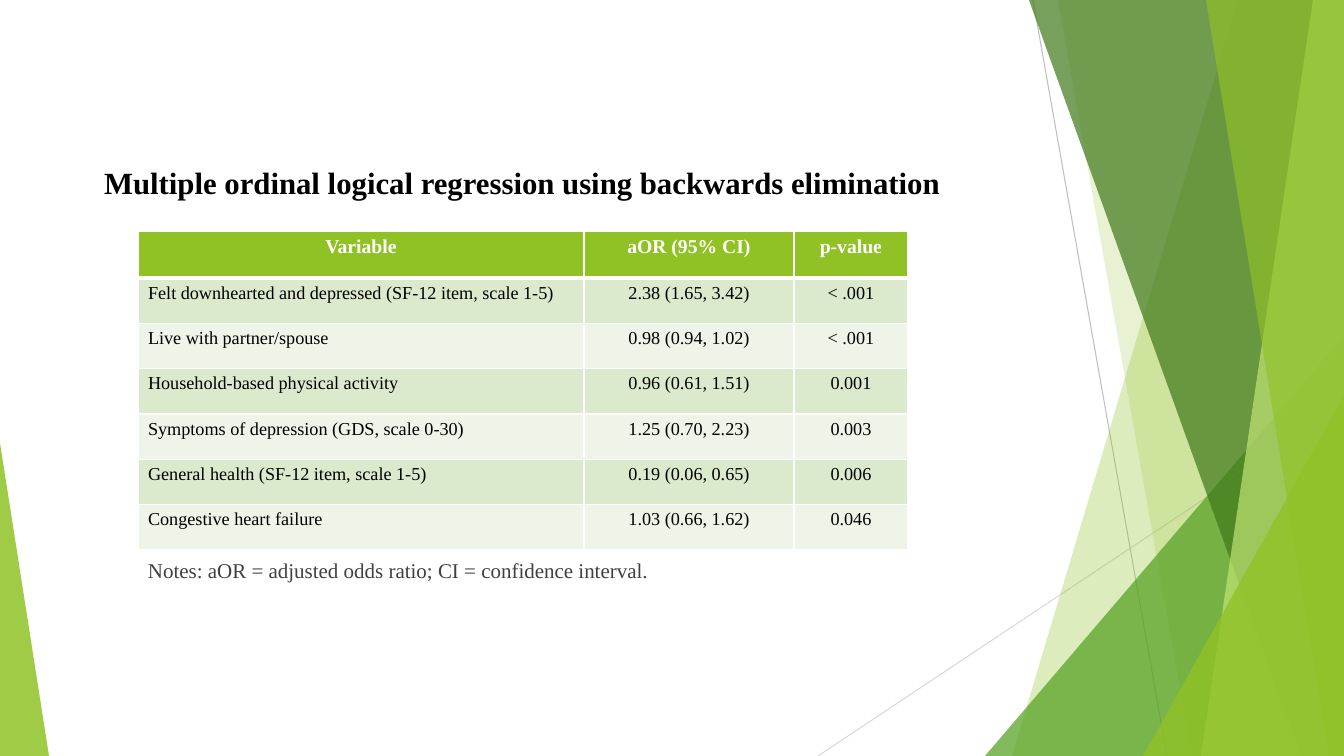
from lxml.etree import SubElement
from pptx import Presentation
from pptx.dml.color import RGBColor
from pptx.enum.shapes import MSO_CONNECTOR, MSO_SHAPE
from pptx.enum.text import MSO_ANCHOR, PP_ALIGN
from pptx.oxml.ns import qn
from pptx.util import Pt

TITLE = "Multiple ordinal logical regression using backwards elimination"
NOTES = "Notes: aOR = adjusted odds ratio; CI = confidence interval."
ROWS = [
    ("Variable", "aOR (95% CI)", "p-value"),
    ("Felt downhearted and depressed (SF-12 item, scale 1-5)", "2.38 (1.65, 3.42)", "< .001"),
    ("Live with partner/spouse", "0.98 (0.94, 1.02)", "< .001"),
    ("Household-based physical activity", "0.96 (0.61, 1.51)", "0.001"),
    ("Symptoms of depression (GDS, scale 0-30)", "1.25 (0.70, 2.23)", "0.003"),
    ("General health (SF-12 item, scale 1-5)", "0.19 (0.06, 0.65)", "0.006"),
    ("Congestive heart failure", "1.03 (0.66, 1.62)", "0.046"),
]

THEME = {
    "font": "Times New Roman",
    "lime": "90C226", "green": "54A021", "forest": "3F7819", "pale": "C0E474",
    "white": "FFFFFF", "black": "000000", "note": "404040",
    "bands": ("DBE9CD", "EEF4E8"),
    "title_size": 22, "header_size": 14, "cell_size": 13, "note_size": 15,
}

PX = 914400 / 100.8
WIDTH, HEIGHT = 1344, 756
RAYS = [((1033, 0), (1167, HEIGHT), "BFBFBF"), ((WIDTH, 406), (818, HEIGHT), "D9D9D9")]
FACETS = [
    ("band", (1238, 1012), "lime", 30),
    ("band", (1058, 1192), "lime", 20),
    ("triangle", (985, 336, 359, 420, 1), "green", 72),
    ("band", (1029, 1301), "forest", 70),
    ("band", (1313, 1201), "pale", 70),
    ("band", (1206, 1329), "lime", 65),
    ("triangle", (1143, 396, 201, 360, 1), "lime", 80),
    ("triangle", (0, 443, 49, 313, 0), "lime", 85),
]
TITLE_BOX = (48, 157, 948, 50)
NOTES_BOX = (138, 553, 840, 34)
TABLE_LEFT, TABLE_TOP = 138, 231
COLUMNS = (446, 210, 114)
HEADER_HEIGHT, BODY_HEIGHT = 47, 272


def emu(*lengths):
    return [round(n * PX) for n in lengths]


def rgb(name):
    return RGBColor.from_string(THEME.get(name, name))


def write(tf, text, size, color, bold=False, align=PP_ALIGN.LEFT):
    p = tf.paragraphs[0]
    p.alignment = align
    r = p.add_run()
    r.text = text
    for key, value in {"name": THEME["font"], "size": Pt(THEME[size]), "bold": bold}.items():
        setattr(r.font, key, value)
    r.font.color.rgb = rgb(color)


def add_text(s, box, *args, **kwargs):
    tf = s.shapes.add_textbox(*emu(*box)).text_frame
    for key, value in {"word_wrap": True, "vertical_anchor": MSO_ANCHOR.MIDDLE}.items():
        setattr(tf, key, value)
    write(tf, *args, **kwargs)


def add_ray(s, start, end, color):
    sp = s.shapes.add_connector(MSO_CONNECTOR.STRAIGHT, *emu(*start, *end))
    sp.line.color.rgb = rgb(color)
    sp.line.width = Pt(0.75)
    SubElement(sp._element.spPr, qn("a:effectLst"))


def add_facet(s, kind, place, color, opacity):
    if kind == "band":
        top_x, bottom_x = place
        outline = s.shapes.build_freeform(top_x, 0, scale=PX)
        outline.add_line_segments([(WIDTH, 0), (WIDTH, HEIGHT), (bottom_x, HEIGHT)])
        sp = outline.convert_to_shape()
    else:
        *box, apex = place
        sp = s.shapes.add_shape(MSO_SHAPE.ISOSCELES_TRIANGLE, *emu(*box))
        sp.adjustments[0] = apex
    sp.shadow.inherit = False
    sp.line.fill.background()
    sp.fill.solid()
    sp.fill.fore_color.rgb = rgb(color)
    tint = sp._element.spPr.find(qn("a:solidFill"))[0]
    SubElement(tint, qn("a:alpha"), val=str(opacity * 1000))


def add_borders(cell, widths):
    tcPr = cell._tc.get_or_add_tcPr()
    for side, width in widths.items():
        ln = SubElement(tcPr, qn(f"a:ln{side}"), w=str(Pt(width)))
        fill = SubElement(ln, qn("a:solidFill"))
        SubElement(fill, qn("a:srgbClr"), val=THEME["white"])


def add_results(s):
    box = emu(TABLE_LEFT, TABLE_TOP, sum(COLUMNS), HEADER_HEIGHT + BODY_HEIGHT)
    table = s.shapes.add_table(len(ROWS), len(COLUMNS), *box).table
    for column, width in zip(table.columns, emu(*COLUMNS)):
        column.width = width
    heights = [HEADER_HEIGHT] + [BODY_HEIGHT / (len(ROWS) - 1)] * (len(ROWS) - 1)
    for i, (values, height) in enumerate(zip(ROWS, emu(*heights))):
        table.rows[i].height = height
        header = i == 0
        for j, text in enumerate(values):
            cell = table.cell(i, j)
            add_borders(cell, {"L": 1, "R": 1, "T": 3 if i == 1 else 1, "B": 3 if header else 1})
            cell.fill.solid()
            cell.fill.fore_color.rgb = rgb("lime" if header else THEME["bands"][(i - 1) % 2])
            align = PP_ALIGN.CENTER if header or j else PP_ALIGN.LEFT
            style = ("header_size", "white") if header else ("cell_size", "black")
            write(cell.text_frame, text, *style, bold=header, align=align)


def main():
    prs = Presentation()
    prs.slide_width, prs.slide_height = emu(WIDTH, HEIGHT)
    s = prs.slides.add_slide(prs.slide_layouts[6])
    for ray in RAYS:
        add_ray(s, *ray)
    for facet in FACETS:
        add_facet(s, *facet)
    add_text(s, TITLE_BOX, TITLE, "title_size", "black", bold=True, align=PP_ALIGN.CENTER)
    add_text(s, NOTES_BOX, NOTES, "note_size", "note")
    add_results(s)
    prs.save("out.pptx")


if __name__ == "__main__":
    main()
